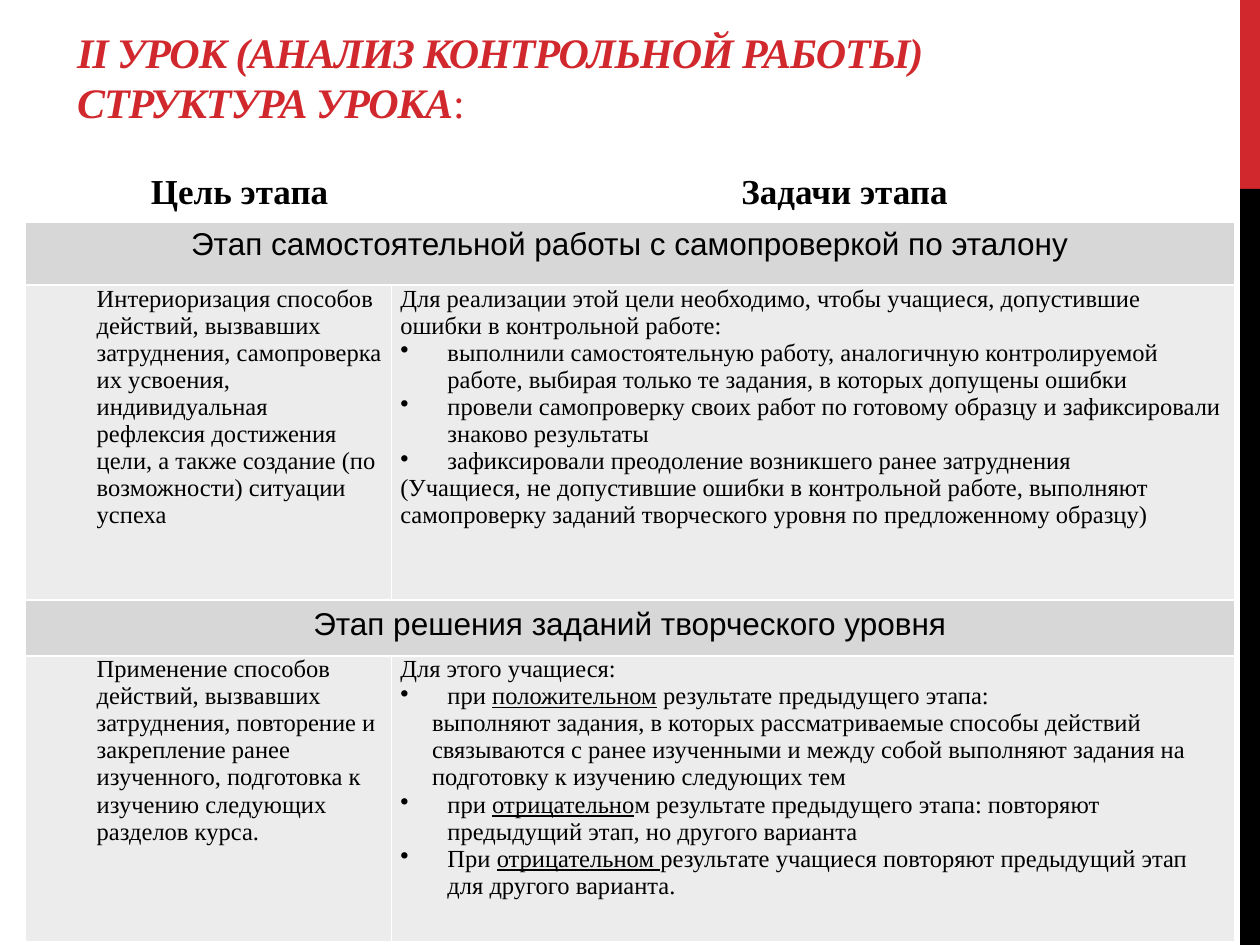
from dataclasses import dataclass

from lxml import etree
from pptx import Presentation
from pptx import util as u
from pptx.dml.color import RGBColor
from pptx.enum import shapes, text
from pptx.oxml import ns

Cm, Pt = u.Cm, u.Pt


@dataclass(frozen=True)
class Theme:
    """Colours, fonts and type sizes of the slide."""
    red: str = "D1282E"
    black: str = "000000"
    white: str = "FFFFFF"
    band: str = "D7D7D7"
    pale: str = "ECECEC"
    serif: str = "Times New Roman"
    sans: str = "Arial"
    title: int = 24
    head: int = 20
    stage: int = 18
    body: int = 14


T = Theme()
INDENT = {"plain": (0, 0), "goal": (1.27, 0), "bullet": (0.95, -0.95), "inner": (0.64, 0)}
HEADS = ["Цель этапа", "Задачи этапа"]
STAGES = [
    ("Этап самостоятельной работы с самопроверкой по эталону",
     "Интериоризация способов действий, вызвавших затруднения, самопроверка их усвоения, "
     "индивидуальная рефлексия достижения цели, а также создание (по возможности) ситуации успеха",
     [("plain", "Для реализации этой цели необходимо, чтобы учащиеся, допустившие ошибки "
                "в контрольной работе:"),
      ("bullet", "выполнили самостоятельную работу, аналогичную контролируемой работе, "
                 "выбирая только те задания, в которых допущены ошибки"),
      ("bullet", "провели самопроверку своих работ по готовому образцу и зафиксировали "
                 "знаково результаты"),
      ("bullet", "зафиксировали преодоление возникшего ранее затруднения"),
      ("plain", "(Учащиеся, не допустившие ошибки в контрольной работе, выполняют "
                "самопроверку заданий творческого уровня по предложенному образцу)")]),
    ("Этап решения заданий творческого уровня",
     "Применение способов действий, вызвавших затруднения, повторение и закрепление ранее "
     "изученного, подготовка к изучению следующих разделов курса.",
     [("plain", "Для этого учащиеся:"),
      ("bullet", "при _положительном_ результате предыдущего этапа:"),
      ("inner", "выполняют задания, в которых рассматриваемые способы действий связываются "
                "с ранее изученными и между собой выполняют задания на подготовку к изучению "
                "следующих тем"),
      ("bullet", "при _отрицательно_м результате предыдущего этапа: повторяют предыдущий "
                 "этап, но другого варианта"),
      ("bullet", "При _отрицательном _результате учащиеся повторяют предыдущий этап для "
                 "другого варианта.")]),
]


def style(font, size, name, color=T.black, bold=False):
    """Set size, face, colour and weight of a font."""
    font.size, font.name, font.bold = Pt(size), name, bold
    font.color.rgb = RGBColor.from_string(color)


def add_bar(slide, top, height, color):
    """Draw one part of the strip along the right edge."""
    bar = slide.shapes.add_shape(shapes.MSO_SHAPE.RECTANGLE, Cm(25), Cm(top), Cm(0.4), Cm(height))
    bar.shadow.inherit = False
    bar.fill.solid()
    bar.fill.fore_color.rgb = RGBColor.from_string(color)
    bar.line.fill.background()


def set_title(slide):
    """Place and fill the title."""
    title = slide.shapes.title
    title.left, title.top, title.width, title.height = Cm(1.3), Cm(0.33), Cm(22.86), Cm(2.36)
    frame = title.text_frame
    frame.vertical_anchor = text.MSO_ANCHOR.BOTTOM
    para = frame.paragraphs[0]
    para.text = "II УРОК (АНАЛИЗ КОНТРОЛЬНОЙ РАБОТЫ)\vСТРУКТУРА УРОКА"
    para.alignment = text.PP_ALIGN.LEFT
    style(para.font, T.title, T.serif, T.red)
    for run in para.runs:
        run.font.bold = run.font.italic = True
    para.add_run().text = ":"
    for run in para.runs:
        run.font.size = Pt(T.title)
        run._r.get_or_add_rPr().set("spc", "-60")


def set_edges(cell, base=1):
    """Give a cell white borders, the lower one of its own width."""
    props = cell._tc.get_or_add_tcPr()
    for place, side in enumerate("LRTB"):
        line = etree.Element(ns.qn(f"a:ln{side}"), w=str(Pt(base if side == "B" else 1)))
        fill = etree.SubElement(line, ns.qn("a:solidFill"))
        etree.SubElement(fill, ns.qn("a:srgbClr"), val=T.white)
        props.insert(place, line)


def set_para(para, kind, words, size, name, bold=False):
    """Write a paragraph, underlining the words between underscores."""
    style(para.font, size, name, bold=bold)
    left, first = INDENT[kind]
    props = para._p.get_or_add_pPr()
    props.set("marL", str(Cm(left)))
    props.set("indent", str(Cm(first)))
    if kind == "bullet":
        mark = etree.Element(ns.qn("a:buChar"), char="•")
        props.insert(0, mark)
    for place, part in enumerate(words.split("_")):
        run = para.add_run()
        run.text = part
        if place % 2:
            run.font.underline = True


def fill_cell(cell, paras, color, size, name, bold=False, center=False, tight=True, base=1):
    """Fill a table cell with paragraphs."""
    cell.fill.solid()
    cell.fill.fore_color.rgb = RGBColor.from_string(color)
    set_edges(cell, base)
    if tight:
        cell.margin_left = cell.margin_right = Cm(0.18)
        cell.margin_top = cell.margin_bottom = 0
    frame = cell.text_frame
    for place, (kind, words) in enumerate(paras):
        para = frame.add_paragraph() if place else frame.paragraphs[0]
        set_para(para, kind, words, size, name, bold)
        if center:
            para.alignment = text.PP_ALIGN.CENTER


def add_plan(slide):
    """Build the table of goals and tasks."""
    cols, rows = [7.39, 17], [1.12, 1.3, 6.35, 1.12, 5.77]
    table = slide.shapes.add_table(
        len(rows), len(cols), Cm(0.5), Cm(3.33), Cm(sum(cols)), Cm(sum(rows))).table
    for col, width in zip(table.columns, cols):
        col.width = Cm(width)
    for row, height in zip(table.rows, rows):
        row.height = Cm(height)
    for col, words in enumerate(HEADS):
        cell = table.cell(0, col)
        fill_cell(cell, [("goal", words)], T.white, T.head, T.serif, True, True, base=3)
        cell.vertical_anchor = text.MSO_ANCHOR.MIDDLE
    for place, (name, goal, tasks) in enumerate(STAGES):
        row = 1 + 2 * place
        band = table.cell(row, 0)
        band.merge(table.cell(row, 1))
        fill_cell(band, [("plain", name)], T.band, T.stage, T.sans, center=True, tight=False)
        fill_cell(table.cell(row + 1, 0), [("goal", goal)], T.pale, T.body, T.serif)
        fill_cell(table.cell(row + 1, 1), tasks, T.pale, T.body, T.serif)


def main():
    """Build and save the slide."""
    deck = Presentation()
    deck.slide_width, deck.slide_height = Cm(25.4), Cm(19.05)
    slide = deck.slides.add_slide(deck.slide_layouts[5])
    add_bar(slide, 0, 3.81, T.red)
    add_bar(slide, 3.81, 15.24, T.black)
    set_title(slide)
    add_plan(slide)
    deck.save("out.pptx")


if __name__ == "__main__":
    main()
